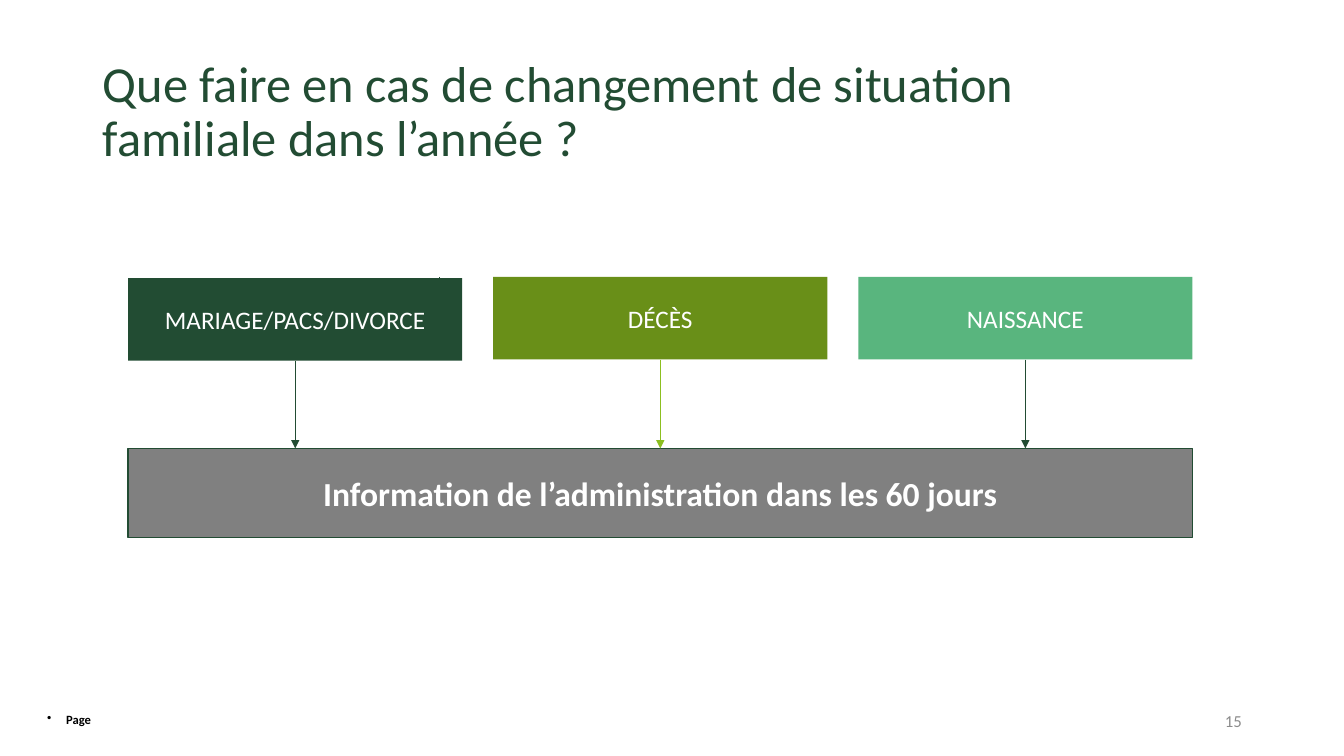
from dataclasses import dataclass

from lxml.etree import SubElement
from pptx import Presentation
from pptx.dml.color import RGBColor
from pptx.enum.shapes import MSO_CONNECTOR, MSO_SHAPE
from pptx.enum.text import MSO_ANCHOR, PP_ALIGN
from pptx.oxml.ns import qn
from pptx.util import Cm, Pt


@dataclass(frozen=True)
class Theme:
    font: str = "Calibri"
    dark_green: str = "224C33"
    olive: str = "698F18"
    mint: str = "59B57E"
    lime: str = "8CBF20"
    bar_grey: str = "808080"
    number_grey: str = "8C8C8C"
    white: str = "FFFFFF"
    black: str = "000000"
    title_size: int = 36
    bar_size: int = 24
    card_size: int = 18
    number_size: int = 12
    footer_size: int = 9


THEME = Theme()

# Layout in centimetres
LEFT, CARD_WIDTH, CARD_HEIGHT, CARD_STEP = 3.23, 8.42, 2.08, 9.2
BAR_TOP, BAR_HEIGHT = 11.3, 2.24
BAR_WIDTH = 2 * CARD_STEP + CARD_WIDTH

# Label, fill, arrow colour, top
EVENTS = [
    ("MARIAGE/PACS/DIVORCE", THEME.dark_green, THEME.dark_green, 7.01),
    ("DÉCÈS", THEME.olive, THEME.lime, 6.98),
    ("NAISSANCE", THEME.mint, THEME.dark_green, 6.98),
]


def write(box, text, size, color, bold=False, align=PP_ALIGN.LEFT,
          anchor=MSO_ANCHOR.MIDDLE):
    frame = box.text_frame
    frame.word_wrap = True
    frame.vertical_anchor = anchor
    para = frame.paragraphs[0]
    para.text = text
    para.alignment = align
    para.font.name = THEME.font
    para.font.size = Pt(size)
    para.font.bold = bold
    para.font.color.rgb = RGBColor.from_string(color)
    return para


def add_label(page, left, top, width, height, text, size, color, **style):
    box = page.shapes.add_textbox(Cm(left), Cm(top), Cm(width), Cm(height))
    return box, write(box, text, size, color, **style)


def add_block(page, left, top, width, height, fill, text, size,
              bold=False, outline=None):
    block = page.shapes.add_shape(
        MSO_SHAPE.RECTANGLE, Cm(left), Cm(top), Cm(width), Cm(height))
    block.shadow.inherit = False
    block.fill.solid()
    block.fill.fore_color.rgb = RGBColor.from_string(fill)
    if outline:
        block.line.color.rgb = RGBColor.from_string(outline)
        block.line.width = Pt(1)
    else:
        block.line.fill.background()
    write(block, text, size, THEME.white, bold=bold, align=PP_ALIGN.CENTER)
    return block


def add_down_arrow(page, center, top, bottom, color):
    arrow = page.shapes.add_connector(
        MSO_CONNECTOR.STRAIGHT, Cm(center), Cm(top), Cm(center), Cm(bottom))
    arrow.line.color.rgb = RGBColor.from_string(color)
    arrow.line.width = Pt(0.5)
    SubElement(arrow.line._get_or_add_ln(), qn("a:tailEnd"), type="triangle")
    SubElement(arrow._element.spPr, qn("a:effectLst"))
    return arrow


def add_page_footer(page):
    box, para = add_label(page, 0.94, 17.81, 1.6, 0.64, "", THEME.footer_size,
                          THEME.black, anchor=MSO_ANCHOR.TOP)
    box.text_frame.margin_right = 0
    properties = para._p.get_or_add_pPr()
    properties.set("marL", str(Cm(0.48)))
    properties.set("indent", str(-Cm(0.48)))
    bullet = properties.makeelement(qn("a:buChar"), {"char": "•"})
    properties.insert(0, bullet)
    write(box, "Page", THEME.footer_size, THEME.black, bold=True,
          anchor=MSO_ANCHOR.TOP)


def main():
    deck = Presentation()
    deck.slide_width, deck.slide_height = Cm(33.87), Cm(19.05)
    page = deck.slides.add_slide(deck.slide_layouts[6])

    # Footer and title
    add_page_footer(page)
    _, title = add_label(
        page, 2.34, 1.02, 26.39, 3.68,
        "Que faire en cas de changement de situation familiale dans l’année ?",
        THEME.title_size, THEME.dark_green)
    title.line_spacing = 0.9

    # Family events
    cards = [
        add_block(page, LEFT + index * CARD_STEP, top, CARD_WIDTH, CARD_HEIGHT,
                  fill, label, THEME.card_size)
        for index, (label, fill, _, top) in enumerate(EVENTS)
    ]

    # Shared obligation
    bar = add_block(page, LEFT, BAR_TOP, BAR_WIDTH, BAR_HEIGHT, THEME.bar_grey,
                    "Information de l’administration dans les 60 jours",
                    THEME.bar_size, bold=True, outline=THEME.dark_green)

    # Arrows from each event to the obligation
    add_down_arrow(page, 11.07, 6.98, 7.72, THEME.dark_green)
    for index, (card, event) in enumerate(zip(cards, EVENTS)):
        center = LEFT + index * CARD_STEP + CARD_WIDTH / 2
        arrow = add_down_arrow(page, center, event[3] + CARD_HEIGHT, BAR_TOP,
                               event[2])
        arrow.begin_connect(card, 2)
        if index == 1:
            arrow.end_connect(bar, 0)

    # Page number
    add_label(page, 23.93, 17.65, 7.62, 1.02, "15", THEME.number_size,
              THEME.number_grey, align=PP_ALIGN.RIGHT)

    deck.save("out.pptx")


if __name__ == "__main__":
    main()
